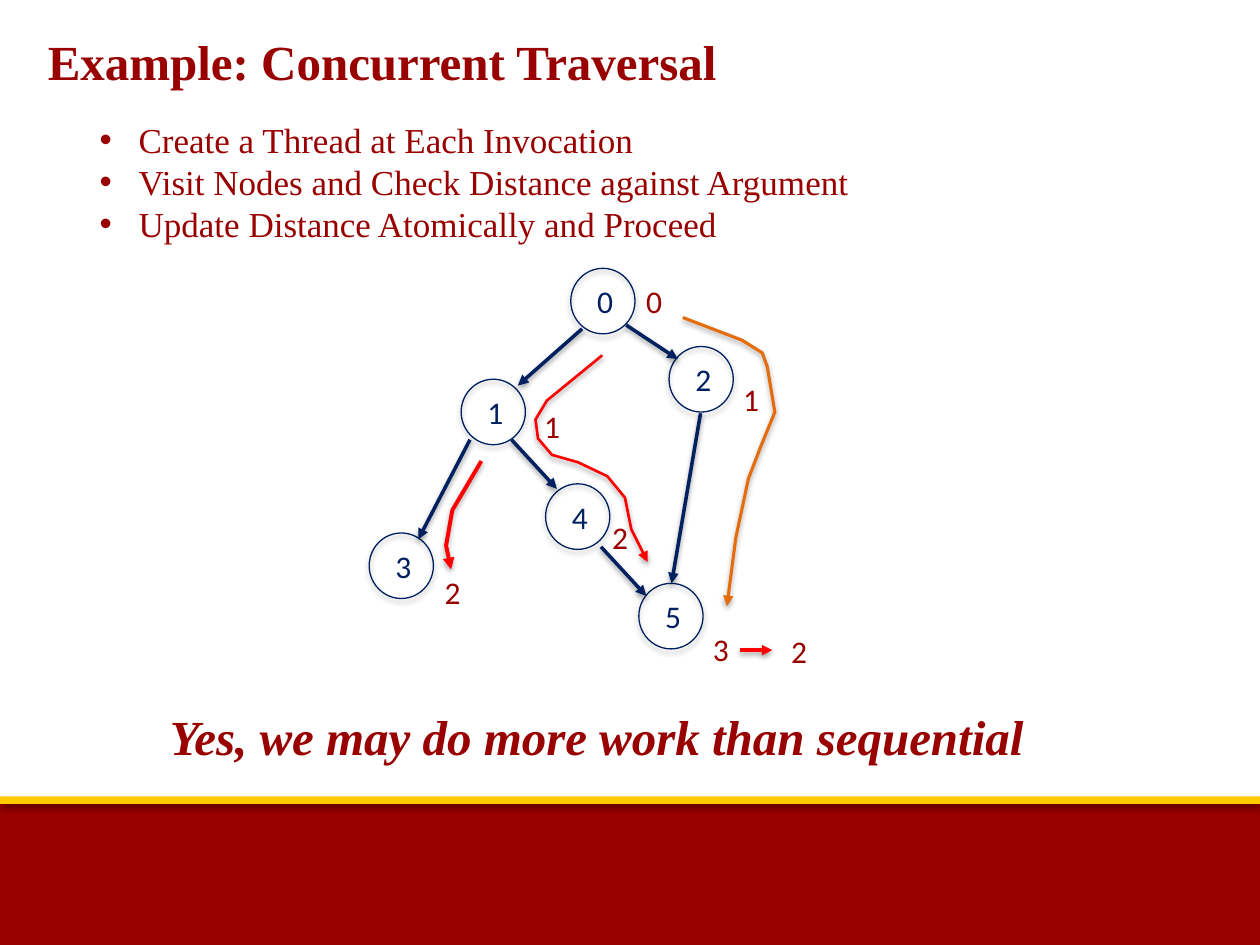
from lxml.etree import SubElement
from pptx import Presentation
from pptx.dml.color import RGBColor
from pptx.enum.shapes import MSO_CONNECTOR, MSO_SHAPE
from pptx.enum.text import MSO_ANCHOR, MSO_AUTO_SIZE, PP_ALIGN
from pptx.oxml.ns import qn
from pptx.util import Inches, Pt

THEME = {
    "red": RGBColor(0x99, 0x00, 0x00),
    "gold": RGBColor(0xFF, 0xCC, 0x00),
    "navy": RGBColor(0x00, 0x20, 0x60),
    "trace": RGBColor(0xFF, 0x00, 0x00),
    "orange": RGBColor(0xE4, 0x6C, 0x0A),
    "serif": "Times New Roman", "sans": "Calibri",
    "heading": Pt(28), "list": Pt(20), "label": Pt(18),
}

prs = Presentation()
prs.slide_width, prs.slide_height = Inches(10), Inches(7.5)
s = prs.slides.add_slide(prs.slide_layouts[1])
CELL = prs.slide_width / 100  # the slide is a grid of 100 columns by 75 rows


def at(*cells):
    return [round(c * CELL) for c in cells]


def finish(shape, color=None, width=0, arrow=False, alpha=35, dist=1.8):
    """Outline, optional arrowhead and soft shadow below the shape."""
    if color is None:
        shape.line.fill.background()
    else:
        shape.line.color.rgb, shape.line.width = color, Pt(width)
    if arrow:
        SubElement(shape.line._get_or_add_ln(), qn("a:tailEnd"), type="triangle")
    pr = shape._element.spPr
    effects = pr.find(qn("a:effectLst"))
    if effects is None:
        effects = SubElement(pr, qn("a:effectLst"))
    shadow = SubElement(effects, qn("a:outerShdw"), blurRad=str(Pt(3.1)),
                        dist=str(Pt(dist)), dir="5400000", rotWithShape="0")
    black = SubElement(shadow, qn("a:srgbClr"), val="000000")
    SubElement(black, qn("a:alpha"), val=str(alpha * 1000))


# Footer bands
for color, top, height in [("red", 63.5, 11.5), ("gold", 63.2, 0.6)]:
    band = s.shapes.add_shape(MSO_SHAPE.RECTANGLE, *at(0, top, 100, height))
    band.fill.solid()
    band.fill.fore_color.rgb = THEME[color]
    finish(band)

# Graph nodes: left and top of each circle
nodes = [(45.3, 21.3), (36.6, 30.1), (53.1, 27.5),
         (29.3, 42.3), (43.3, 38.4), (50.7, 46.3)]
for x, y in nodes:
    node = s.shapes.add_shape(MSO_SHAPE.OVAL, *at(x, y, 5.1, 5.2))
    node.fill.background()
    finish(node, THEME["navy"], 0.75)

# Graph edges, then the arrow for the distance update
edges = [
    (49.7, 25.8, 53.8, 28.5), (46.2, 26.1, 41.1, 30.6),
    (37.3, 34.9, 33.2, 42.8), (40.6, 34.9, 44.2, 38.8),
    (47.7, 43.4, 51.3, 47.3), (55.6, 32.8, 53.3, 46.3),
]
update = (58.7, 51.6, 61.3, 51.6)
for ends in edges + [update]:
    line = s.shapes.add_connector(MSO_CONNECTOR.STRAIGHT, *at(*ends))
    color = THEME["trace" if ends == update else "navy"]
    finish(line, color, 2, arrow=True, alpha=38, dist=1.6)

# Thread paths
paths = [
    ("trace", 1.5, [(47.8, 28.2), (43.4, 31.8), (42.5, 33.3), (42.7, 34.8),
                    (43.8, 36.1), (45.9, 36.7), (48.2, 37.8), (49.6, 39.5),
                    (50.1, 42), (51.4, 44.6)]),
    ("trace", 2.25, [(38.2, 36.6), (35.9, 40.5), (35.4, 43.3), (35.8, 45.2)]),
    ("orange", 1.75, [(54.2, 25.2), (58.9, 27), (60.5, 28), (60.9, 29.1),
                      (61.5, 32.7), (60.4, 35.4), (59.4, 38), (58.4, 42.7),
                      (57.7, 48.1)]),
]
for color, width, points in paths:
    builder = s.shapes.build_freeform(*at(*points[0]))
    builder.add_line_segments([at(*pt) for pt in points[1:]], close=False)
    path = builder.convert_to_shape()
    path.fill.background()
    finish(path, THEME[color], width, arrow=True)

# Text: shape, place, lines, font format
heading = {"name": THEME["serif"], "size": THEME["heading"], "bold": True}
listing = {"name": THEME["serif"], "size": THEME["list"]}
label = {"name": THEME["sans"], "size": THEME["label"]}
body = s.placeholders[1]
texts = [
    (s.shapes.title, (2.8, 2, 77.2, 5.7),
     ["Example: Concurrent Traversal"], heading, "red"),
    (body, (6.9, 8.9, 82.9, 11.1),
     ["Create a Thread at Each Invocation",
      "Visit Nodes and Check Distance against Argument",
      "Update Distance Atomically and Proceed"], listing, "red"),
    (None, (12.5, 55.6, 75.1, 8.8),
     ["Yes, we may do more work than sequential"],
     {**heading, "italic": True}, "red"),
]
texts += [(None, (x + 1.1, y + 0.6, 3.3, 4), [str(i)], label, "navy")
          for i, (x, y) in enumerate(nodes)]
distances = [("0", 50.3, 21.9), ("1", 42.2, 31.8), ("2", 34.3, 45),
             ("2", 47.6, 40.6), ("3", 55.6, 49.5), ("2", 61.8, 49.7),
             ("1", 58, 29.7)]
texts += [(None, (x, y, 3.3, 4), [d], label, "red") for d, x, y in distances]

for shape, place, lines, fmt, color in texts:
    shape = shape or s.shapes.add_textbox(*at(*place))
    shape.left, shape.top, shape.width, shape.height = at(*place)
    tf = shape.text_frame
    tf.text = "\n".join(lines)
    tf.word_wrap = fmt is not label
    tf.auto_size = MSO_AUTO_SIZE.NONE
    tf.vertical_anchor = MSO_ANCHOR.TOP
    for p in tf.paragraphs:
        p.alignment = PP_ALIGN.JUSTIFY if fmt is listing else PP_ALIGN.LEFT
        p.space_before = Pt(0)
        for r in p.runs:
            r.font.color.rgb = THEME[color]
            for key, value in fmt.items():
                setattr(r.font, key, value)

# Hanging bullets
for p in body.text_frame.paragraphs:
    pPr = p._p.get_or_add_pPr()
    pPr.set("marL", str(Inches(0.31)))
    pPr.set("indent", str(-Inches(0.31)))

prs.save("out.pptx")
